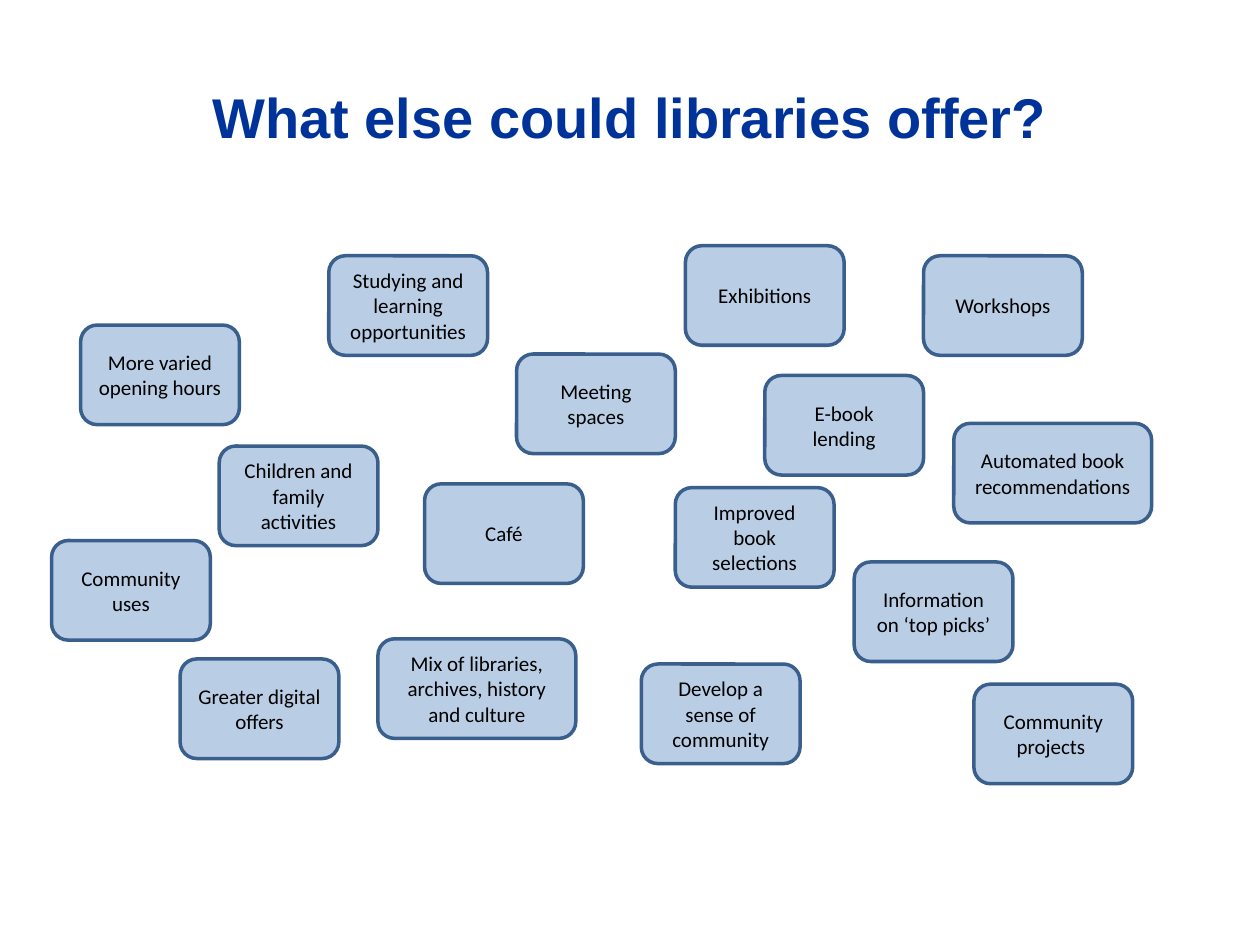
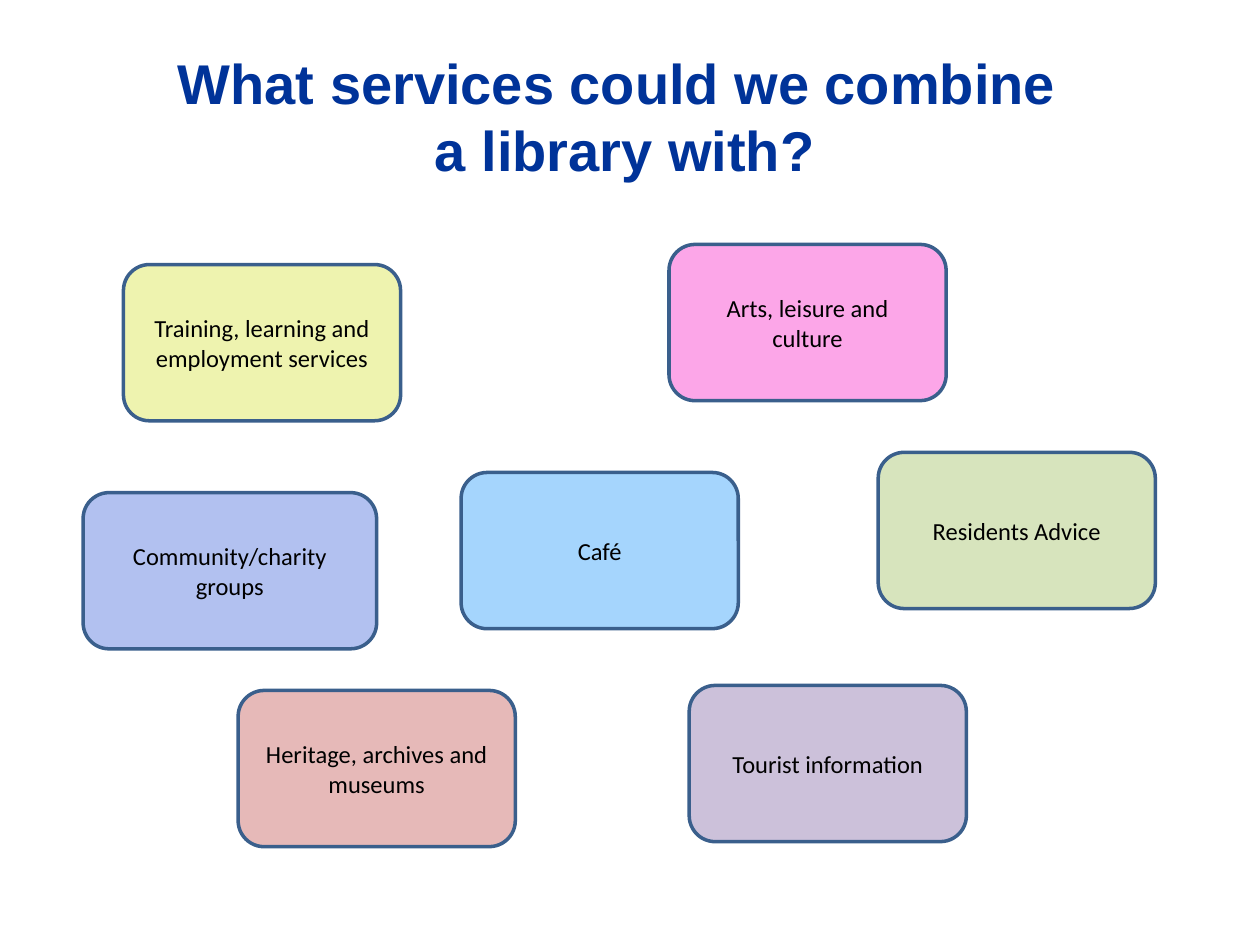
from pptx import Presentation
from pptx.dml.color import RGBColor
from pptx.enum.shapes import MSO_SHAPE
from pptx.enum.text import MSO_ANCHOR, MSO_AUTO_SIZE, PP_ALIGN
from pptx.util import Pt

ROUND = MSO_SHAPE.ROUNDED_RECTANGLE
MIDDLE = MSO_ANCHOR.MIDDLE
CENTER = PP_ALIGN.CENTER
NO_FIT = MSO_AUTO_SIZE.NONE
PX = 9144
TITLE_ONLY = 5

COLORS = {
    "page": "FFFFFF", "title": "003399", "ink": "000000", "edge": "3A5F8C",
    "steel": "B9CDE5", "sky": "A5D5FD", "blue": "B2C1F0", "rose": "E6B9B8",
    "green": "D7E4BD", "lemon": "EEF3AF", "lilac": "CCC1DA", "pink": "FCA6E8",
}

IDEA_W, WIDE_W, IDEA_H = 126, 157, 79
IDEAS = [
    ("More varied opening hours", 64, 258, IDEA_W),
    ("Exhibitions", 544, 195, IDEA_W),
    ("Children and family activities", 174, 354, IDEA_W),
    ("Community uses", 41, 429, IDEA_W),
    ("E-book lending", 607, 298, IDEA_W),
    ("Studying and learning opportunities", 261, 203, IDEA_W),
    ("Greater digital offers", 143, 523, IDEA_W),
    ("Mix of libraries, archives, history and culture", 300, 507, WIDE_W),
    ("Café", 337, 384, IDEA_W),
    ("Develop a sense of community", 509, 527, IDEA_W),
    ("Community projects ", 773, 543, IDEA_W),
    ("Information on ‘top picks’", 678, 446, IDEA_W),
    ("Improved book selections", 536, 387, IDEA_W),
    ("Meeting spaces", 410, 281, IDEA_W),
    ("Automated book recommendations", 757, 336, WIDE_W),
    ("Workshops", 733, 203, IDEA_W),
]

PLACE_W, GROUP_W, PLACE_H = 220, 233, 124
PLACES = [
    ("Café", 366, 375, PLACE_W, "sky"),
    ("Community/charity groups", 66, 391, GROUP_W, "blue"),
    ("Heritage, archives and museums", 189, 548, PLACE_W, "rose"),
    ("Residents Advice", 697, 359, PLACE_W, "green"),
    ("Training, learning and employment services", 98, 210, PLACE_W, "lemon"),
    ("Tourist information", 547, 544, PLACE_W, "lilac"),
    ("Arts, leisure and culture", 531, 194, PLACE_W, "pink"),
]


def color(name):
    return RGBColor.from_string(COLORS[name])


def put_text(frame, text, font="Calibri", size=12, ink="ink", bold=False):
    frame.word_wrap = True
    frame.auto_size = NO_FIT
    frame.vertical_anchor = MIDDLE
    para = frame.paragraphs[0]
    para.alignment = CENTER
    for row, line in enumerate(text.split("\n")):
        if row:
            para.add_line_break()
        run = para.add_run()
        run.text = line
        run.font.name = font
        run.font.size = Pt(size)
        run.font.bold = bold
        run.font.color.rgb = color(ink)


class Deck:
    def __init__(self, width, height):
        self.pres = Presentation()
        self.pres.slide_width = width * PX
        self.pres.slide_height = height * PX
        self.slide = None

    def page(self, text, left, top):
        self.slide = self.pres.slides.add_slide(self.pres.slide_layouts[TITLE_ONLY])
        fill = self.slide.background.fill
        fill.solid()
        fill.fore_color.rgb = color("page")
        title = self.slide.shapes.title
        title.left, title.top = left * PX, top * PX
        title.width, title.height = 900 * PX, 125 * PX
        put_text(title.text_frame, text, font="Arial", size=32, ink="title", bold=True)

    def box(self, text, left, top, width, height, fill="steel", size=12):
        shape = self.slide.shapes.add_shape(
            ROUND, left * PX, top * PX, width * PX, height * PX)
        shape.shadow.inherit = False
        shape.fill.solid()
        shape.fill.fore_color.rgb = color(fill)
        shape.line.color.rgb = color("edge")
        shape.line.width = Pt(2)
        put_text(shape.text_frame, text, size=size)

    def save(self):
        self.pres.save("out.pptx")


def main():
    deck = Deck(1000, 750)
    deck.page("What else could libraries offer?", 50, 30)
    for text, left, top, width in IDEAS:
        deck.box(text, left, top, width, IDEA_H)
    deck.page("What services could we combine \na library with?", 46, 29)
    for text, left, top, width, fill in PLACES:
        deck.box(text, left, top, width, PLACE_H, fill=fill, size=14)
    deck.save()


if __name__ == "__main__":
    main()
